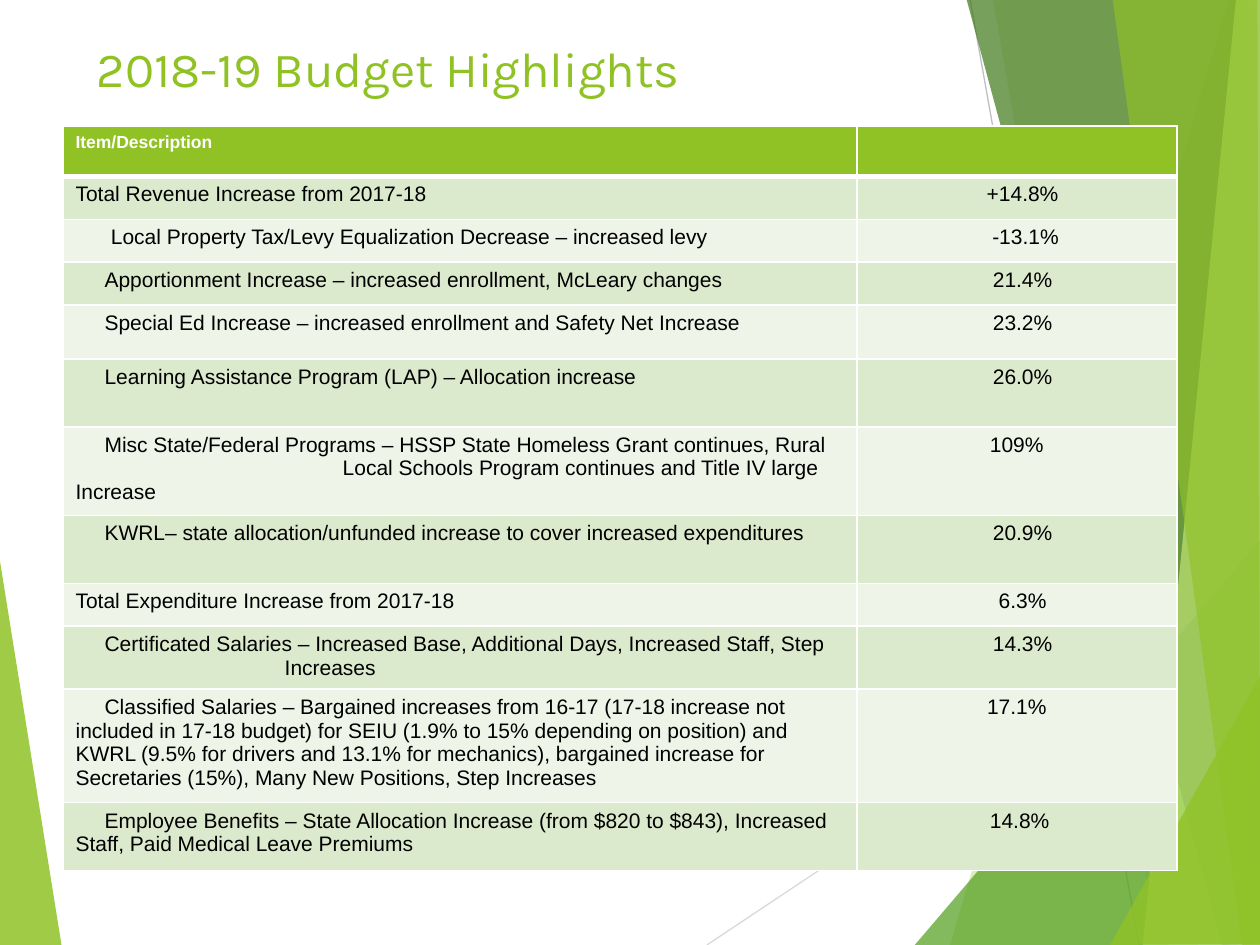
from lxml.etree import SubElement
from pptx import Presentation
from pptx.dml.color import RGBColor
from pptx.enum.shapes import MSO_CONNECTOR as Connector
from pptx.enum.text import MSO_ANCHOR as Anchor, PP_ALIGN as Align
from pptx.oxml.ns import qn
from pptx.util import Inches, Pt

GREEN, WHITE, BLACK = "90C226", "FFFFFF", "000000"
BAND_COLORS = ("DBE9CD", "EEF4E8")
ITEM_INDENT = 0.23
SPACE_WIDTH = 0.046

FACETS = [
    ([(-0.01, 4.39), (0.49, 7.51), (-0.01, 7.5)], GREEN, 85),
    ([(9.75, 0), (7.54, 7.5), (10.02, 7.51), (10.01, 0.01)], GREEN, 30),
    ([(7.88, -0.01), (9.19, 7.5), (10.01, 7.5), (10.01, -0.01)], GREEN, 20),
    ([(7.26, 7.5), (10, 4.29), (10.01, 7.5)], "54A021", 72),
    ([(7.67, -0.01), (9.7, 7.5), (10.01, 7.49), (10.01, -0.01)], "3F7819", 70),
    ([(9.81, -0.01), (9.07, 7.5), (10.01, 7.5), (10, -0.01)], "C0E474", 70),
    ([(8.83, -0.01), (9.86, 7.5), (10, 7.5), (9.98, -0.01)], GREEN, 65),
    ([(8.81, 7.5), (10.01, 5.35), (10.01, 7.49)], GREEN, 80),
]

# Each row: height, (indent, text) paragraphs, value, spaces before the value
BUDGET_ROWS = [
    (0.34, [(0, "Total Revenue Increase from 2017-18")], "+14.8%", 2),
    (0.34, [(0.28, "Local Property Tax/Levy Equalization Decrease – increased levy")], "-13.1%", 3),
    (0.34, [(ITEM_INDENT, "Apportionment Increase – increased enrollment, McLeary changes")], "21.4%", 2),
    (0.43, [(ITEM_INDENT, "Special Ed Increase – increased enrollment and Safety Net Increase")], "23.2%", 2),
    (0.54, [(ITEM_INDENT, "Learning Assistance Program (LAP) – Allocation increase")], "26.0%", 2),
    (0.54, [(ITEM_INDENT, "Misc State/Federal Programs – HSSP State Homeless Grant continues, Rural"),
            (2.12, "Local Schools Program continues and Title IV large Increase")], "109%", 0),
    (0.54, [(ITEM_INDENT, "KWRL– state allocation/unfunded increase to cover increased expenditures")], "20.9%", 2),
    (0.34, [(0, "Total Expenditure Increase from 2017-18")], "6.3%", 2),
    (0.34, [(ITEM_INDENT, "Certificated Salaries – Increased Base, Additional Days, Increased Staff, Step"),
            (1.66, "Increases")], "14.3%", 2),
    (0.34, [(ITEM_INDENT, "Classified Salaries – Bargained increases from 16-17 (17-18 increase not "
             "included in 17-18 budget) for SEIU (1.9% to 15% depending on position) and "
             "KWRL (9.5% for drivers and 13.1% for mechanics), bargained increase for "
             "Secretaries (15%), Many New Positions, Step Increases")], "17.1%", 0),
    (0.54, [(ITEM_INDENT, "Employee Benefits – State Allocation Increase (from $820 to $843), Increased "
             "Staff, Paid Medical Leave Premiums")], "14.8%", 1),
]


def color(value):
    return RGBColor.from_string(value)


def paint(fill, value):
    fill.solid()
    fill.fore_color.rgb = color(value)


def add_facet(slide, points, fill_color, opacity):
    corners = [(Inches(x), Inches(y)) for x, y in points]
    builder = slide.shapes.build_freeform(*corners[0])
    builder.add_line_segments(corners[1:], close=True)
    shape = builder.convert_to_shape()
    shape.shadow.inherit = False
    paint(shape.fill, fill_color)
    shape.line.fill.background()
    tint = shape.fill._xPr.find(qn("a:solidFill"))[0]
    SubElement(tint, qn("a:alpha"), val=str(opacity * 1000))


def add_line(slide, start, end, line_color):
    points = [Inches(value) for value in start + end]
    connector = slide.shapes.add_connector(Connector.STRAIGHT, *points)
    connector.line.color.rgb = color(line_color)
    connector.line.width = Pt(0.75)
    SubElement(connector._element.spPr, qn("a:effectLst"))


def write(paragraph, text, size, text_color, font="Arial", bold=False):
    run = paragraph.add_run()
    run.text = text
    run.font.size = Pt(size)
    run.font.name = font
    run.font.bold = bold
    run.font.color.rgb = color(text_color)


def add_title(slide, text):
    box = slide.shapes.add_textbox(Inches(0.67), Inches(0.25), Inches(8.92), Inches(0.58))
    frame = box.text_frame
    frame.word_wrap = True
    frame.vertical_anchor = Anchor.MIDDLE
    write(frame.paragraphs[0], text, 28, GREEN, "Karla")


def style_cell(cell, fill_color, top=1, bottom=1):
    properties = cell._tc.get_or_add_tcPr()
    for side, points in (("L", 1), ("R", 1), ("T", top), ("B", bottom)):
        border = SubElement(properties, qn(f"a:ln{side}"), w=str(Pt(points)))
        solid = SubElement(border, qn("a:solidFill"))
        SubElement(solid, qn("a:srgbClr"), val=WHITE)
    paint(cell.fill, fill_color)


def fill_item(cell, paragraphs):
    frame = cell.text_frame
    for index, (indent, text) in enumerate(paragraphs):
        paragraph = frame.add_paragraph() if index else frame.paragraphs[0]
        paragraph._p.get_or_add_pPr().set("indent", str(Inches(indent)))
        write(paragraph, text, 12, BLACK)


def fill_value(cell, text, spaces):
    paragraph = cell.text_frame.paragraphs[0]
    paragraph.alignment = Align.CENTER
    paragraph._p.get_or_add_pPr().set("marL", str(Inches(spaces * SPACE_WIDTH)))
    write(paragraph, text, 12, BLACK)


def add_budget_table(slide):
    frame = slide.shapes.add_table(len(BUDGET_ROWS) + 1, 2, Inches(0.5), Inches(1),
                                   Inches(8.84), Inches(5.03))
    table = frame.table
    for column, width in zip(table.columns, (6.3, 2.54)):
        column.width = Inches(width)
    table.rows[0].height = Inches(0.4)
    for cell in table.rows[0].cells:
        style_cell(cell, GREEN, bottom=3)
    write(table.cell(0, 0).text_frame.paragraphs[0], "Item/Description", 10, WHITE, bold=True)
    for number, (height, paragraphs, value, spaces) in enumerate(BUDGET_ROWS, 1):
        row = table.rows[number]
        row.height = Inches(height)
        for cell in row.cells:
            style_cell(cell, BAND_COLORS[(number - 1) % 2], top=3 if number == 1 else 1)
        fill_item(row.cells[0], paragraphs)
        fill_value(row.cells[1], value, spaces)


def main():
    presentation = Presentation()
    presentation.slide_width, presentation.slide_height = Inches(10), Inches(7.5)
    slide = presentation.slides.add_slide(presentation.slide_layouts[6])
    paint(slide.background.fill, WHITE)
    add_facet(slide, *FACETS[0])
    add_line(slide, (5.61, 7.5), (10.01, 4.57), "D9D9D9")
    add_line(slide, (7.7, 0), (9.04, 7.5), "BFBFBF")
    for facet in FACETS[1:]:
        add_facet(slide, *facet)
    add_title(slide, "2018-19 Budget Highlights")
    add_budget_table(slide)
    presentation.save("out.pptx")


if __name__ == "__main__":
    main()
